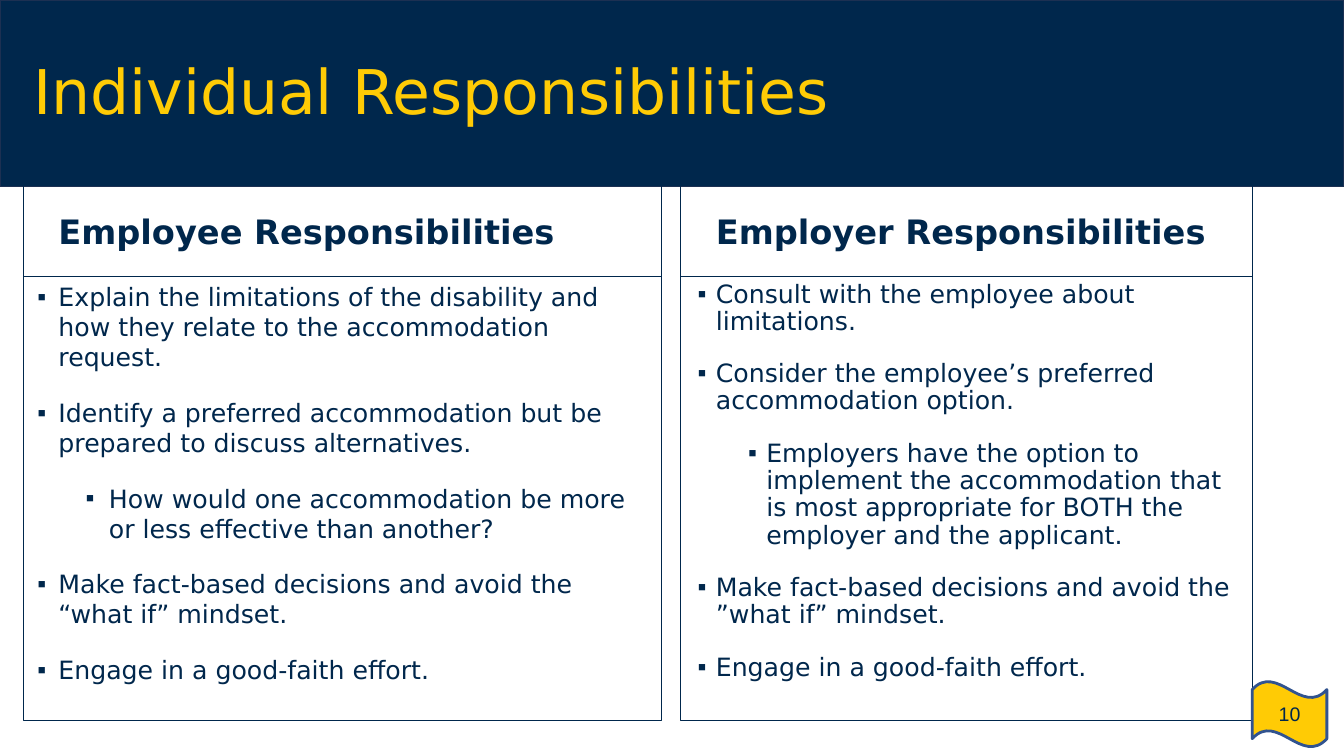
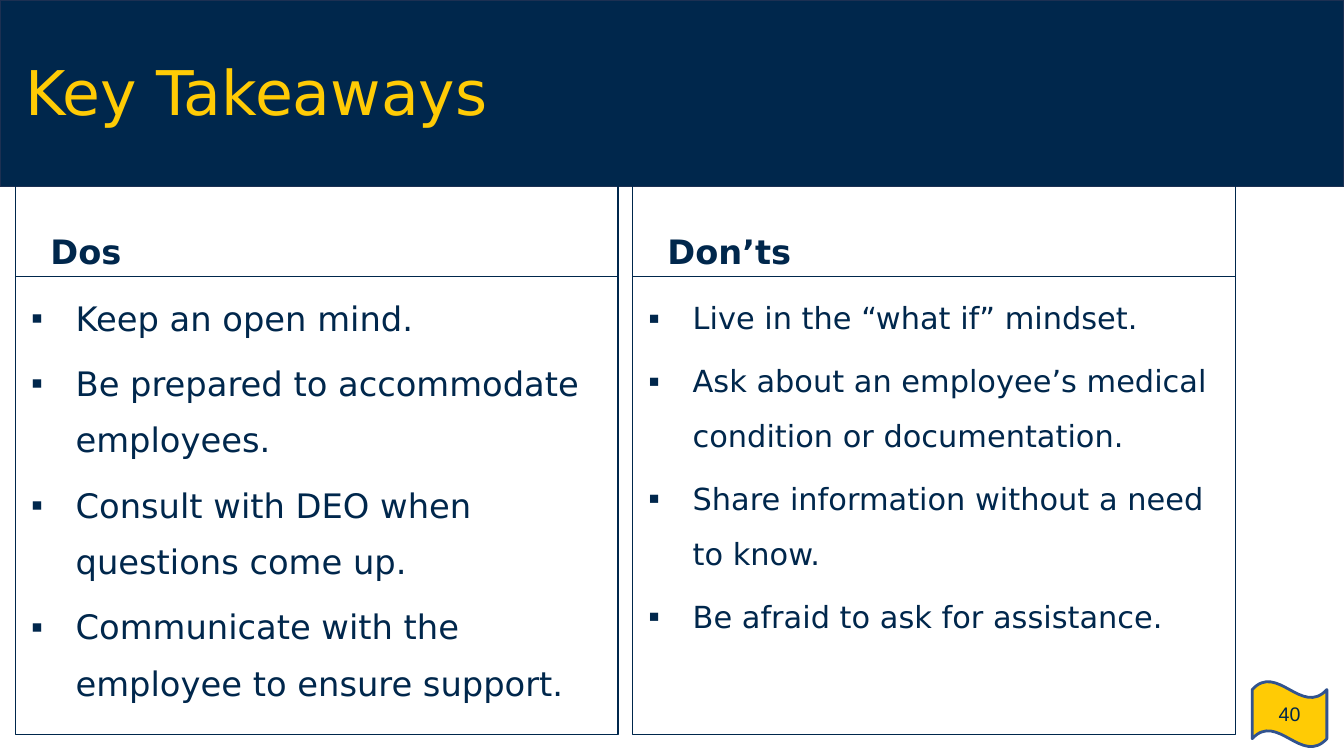
"""Builds two comparison slides with a navy title band and a page flag."""
from lxml import etree
from pptx import Presentation
from pptx import util as u
from pptx.dml import color
from pptx.enum import shapes, text
from pptx.oxml import ns

NAVY, GOLD, WHITE = "00274C", "FFCB05", "FFFFFF"
BAND_EDGE, FLAG_EDGE = "1C3052", "31538F"
FONT, FLAG_FONT = "DejaVu Sans", "Arial"
SLIDE_WIDTH, SLIDE_HEIGHT = 13.33, 7.5
HEADING_TOP, HEADING_HEIGHT = 1.84, 0.9
LIST_TOP = HEADING_TOP + HEADING_HEIGHT


def rgb(value):
    """Return the colour for a hex string."""
    return color.RGBColor.from_string(value)


class Deck:
    """Holds the shared style and the current slide."""

    def __init__(self):
        """Open a wide presentation on the comparison layout."""
        self.prs = Presentation()
        self.prs.slide_width = u.Inches(SLIDE_WIDTH)
        self.prs.slide_height = u.Inches(SLIDE_HEIGHT)
        self.layout = self.prs.slide_layouts.get_by_name("Comparison")
        self.slide = None

    def new_slide(self, title, left, top, width, page):
        """Start a slide with its title and page flag."""
        self.slide = self.prs.slides.add_slide(self.layout)
        if len(self.prs.slides) == 1:
            self.add_band()
        frame = self.place(0, left, top, width, 1.45, text.MSO_ANCHOR.MIDDLE)
        heading = frame.paragraphs[0]
        heading.text = title
        heading.line_spacing = 0.9
        self.style(heading, 44, GOLD)
        self.add_flag(page)

    def add_band(self):
        """Put the title band on the layout, behind every slide."""
        band = self.shape(shapes.MSO_SHAPE.RECTANGLE, 0, 0, SLIDE_WIDTH, 1.85,
                          NAVY, BAND_EDGE, 1)
        band.element.nvSpPr.cNvPr.set("id", "20")
        self.layout.shapes.element.insert(2, band.element)

    def add_flag(self, page):
        """Add the wavy flag with the page number."""
        flag = self.shape(shapes.MSO_SHAPE.WAVE, 12.42, 6.76, 0.74, 0.65,
                          GOLD, FLAG_EDGE, 2)
        flag.text_frame.vertical_anchor = text.MSO_ANCHOR.MIDDLE
        number = flag.text_frame.paragraphs[0]
        number.text = page
        self.style(number, 14, NAVY, font=FLAG_FONT, align=text.PP_ALIGN.CENTER)

    def shape(self, kind, left, top, width, height, fill, edge, weight):
        """Add a filled and outlined preset shape."""
        added = self.slide.shapes.add_shape(
            kind, *map(u.Inches, (left, top, width, height)))
        added.shadow.inherit = False
        added.fill.solid()
        added.fill.fore_color.rgb = rgb(fill)
        added.line.color.rgb = rgb(edge)
        added.line.width = u.Pt(weight)
        return added

    def place(self, idx, left, top, width, height, anchor, edge=None, fill=None):
        """Move a placeholder, outline it and return its text frame."""
        holder = self.slide.placeholders[idx]
        holder.left, holder.top = u.Inches(left), u.Inches(top)
        holder.width, holder.height = u.Inches(width), u.Inches(height)
        if edge:
            holder.line.color.rgb = rgb(edge)
            holder.line.width = u.Pt(0.75)
        if fill:
            holder.fill.solid()
            holder.fill.fore_color.rgb = rgb(fill)
        frame = holder.text_frame
        frame.word_wrap = True
        frame.auto_size = text.MSO_AUTO_SIZE.NONE
        frame.vertical_anchor = anchor
        return frame

    def style(self, paragraph, size, hue, bold=False, font=FONT,
              align=text.PP_ALIGN.LEFT):
        """Set the font and alignment of a paragraph."""
        paragraph.alignment = align
        paragraph.font.size = u.Pt(size)
        paragraph.font.name = font
        paragraph.font.bold = bold
        paragraph.font.color.rgb = rgb(hue)

    def indent(self, paragraph, margin, hanging):
        """Set a hanging indent and return the paragraph properties."""
        props = paragraph._p.get_or_add_pPr()
        props.set("marL", str(u.Inches(margin)))
        props.set("indent", str(-u.Inches(hanging)))
        return props

    def bullet(self, props, percent):
        """Give paragraph properties a navy square bullet."""
        tint = etree.SubElement(props, ns.qn("a:buClr"))
        etree.SubElement(tint, ns.qn("a:srgbClr"), val=NAVY)
        etree.SubElement(props, ns.qn("a:buSzPct"), val=str(percent * 1000))
        etree.SubElement(props, ns.qn("a:buFont"), typeface=FLAG_FONT)
        etree.SubElement(props, ns.qn("a:buChar"), char="▪")

    def heading(self, side, label, left, width, anchor):
        """Fill the heading box of a column (side 0 or 1)."""
        frame = self.place(1 + 2 * side, left, HEADING_TOP, width,
                           HEADING_HEIGHT, anchor, NAVY)
        caption = frame.paragraphs[0]
        caption.text = label
        caption.space_before = u.Pt(18)
        self.indent(caption, 0.5, 0.25)
        self.style(caption, 24, NAVY, bold=True)

    def points(self, side, items, left, width, height, size, margin, hangings,
               spacing, before, first_before, percent=100, fill=None):
        """Fill the list box of a column with (level, wording) items."""
        frame = self.place(2 + 2 * side, left, LIST_TOP, width, height,
                           text.MSO_ANCHOR.TOP, NAVY, fill)
        for i, (level, wording) in enumerate(items):
            point = frame.add_paragraph() if i else frame.paragraphs[0]
            point.text = wording
            point.level = level
            point.line_spacing = spacing
            point.space_before = u.Pt(before if i else first_before)
            props = self.indent(point, margin + 0.5 * level, hangings[level])
            self.bullet(props, percent)
            self.style(point, size, NAVY)


def responsibilities(deck):
    """Build the slide on individual responsibilities."""
    deck.new_slide("Individual Responsibilities", 0.23, 0.21, 11.5, "10")
    employee = [
        (0, "Explain the limitations of the disability and how they relate to "
            "the accommodation request."),
        (0, "Identify a preferred accommodation but be prepared to discuss "
            "alternatives."),
        (1, "How would one accommodation be more or less effective than another?"),
        (0, "Make fact-based decisions and avoid the “what if” mindset."),
        (0, "Engage in a good-faith effort."),
    ]
    employer = [
        (0, "Consult with the employee about limitations."),
        (0, "Consider the employee’s preferred accommodation option."),
        (1, "Employers have the option to implement the accommodation that is "
            "most appropriate for BOTH the employer and the applicant."),
        (0, "Make fact-based decisions and avoid the ”what if” mindset."),
        (0, "Engage in a good-faith effort."),
    ]
    columns = [
        ("Employee Responsibilities", employee, 0.23, 6.33, (0.21, 0.23), 1.0, 0),
        ("Employer Responsibilities", employer, 6.75, 5.67, (0.18, 0.18), 0.9, 18),
    ]
    for side, (label, items, left, width, hangings, spacing, first) in enumerate(columns):
        deck.heading(side, label, left, width, text.MSO_ANCHOR.MIDDLE)
        deck.points(side, items, left, width, 4.41, 18, 0.25, hangings,
                    spacing, 18, first)


def takeaways(deck):
    """Build the slide on key takeaways."""
    deck.new_slide("Key Takeaways", 0.15, 0.22, 10.77, "40")
    dos = ["Keep an open mind.", "Be prepared to accommodate employees.",
           "Consult with DEO when questions come up.",
           "Communicate with the employee to ensure support."]
    donts = ["Live in the “what if” mindset.",
             "Ask about an employee’s medical condition or documentation.",
             "Share information without a need to know.",
             "Be afraid to ask for assistance."]
    columns = [("Dos", dos, 24.1, 1.4, 100, WHITE),
               ("Don’ts", donts, 21.7, 1.5, 108, None)]
    width, gap = 5.98, 0.14
    for side, (label, items, size, spacing, percent, fill) in enumerate(columns):
        left = 0.15 + side * (width + gap)
        deck.heading(side, label, left, width, text.MSO_ANCHOR.BOTTOM)
        deck.points(side, [(0, item) for item in items], left, width, 4.55,
                    size, 0.5, (0.44,), spacing, 6, 6, percent, fill)


def main():
    """Build and save the deck."""
    deck = Deck()
    responsibilities(deck)
    takeaways(deck)
    deck.prs.save("out.pptx")


if __name__ == "__main__":
    main()
